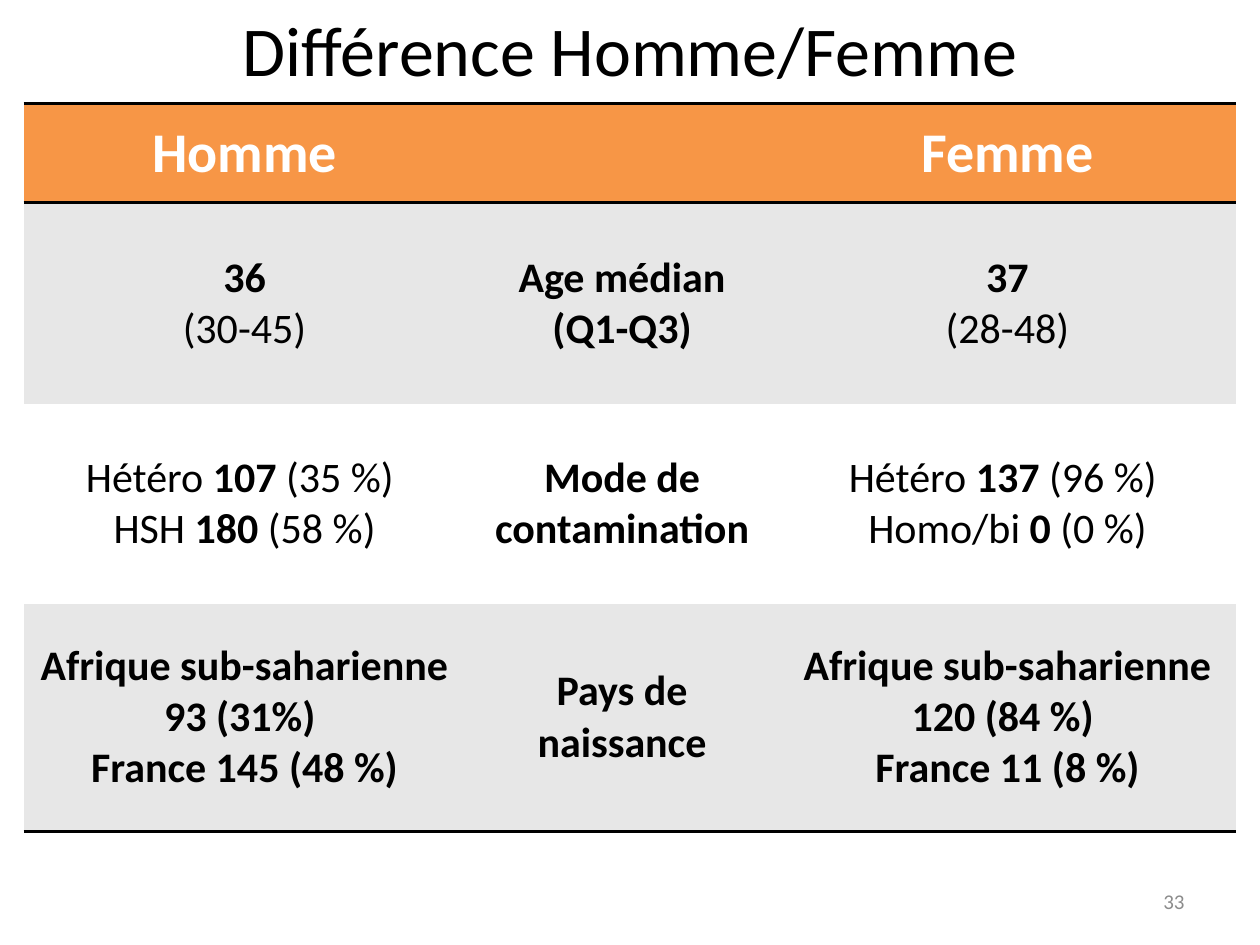
from lxml import etree
from pptx import Presentation
from pptx.dml.color import RGBColor
from pptx.enum.text import MSO_ANCHOR, PP_ALIGN
from pptx.oxml.ns import qn
from pptx.util import Pt

CENTER, RIGHT = PP_ALIGN.CENTER, PP_ALIGN.RIGHT
TOP, MIDDLE = MSO_ANCHOR.TOP, MSO_ANCHOR.MIDDLE
BLACK = RGBColor(0x00, 0x00, 0x00)
WHITE = RGBColor(0xFF, 0xFF, 0xFF)
ORANGE = RGBColor(0xF7, 0x96, 0x46)
BAND = RGBColor(0xE7, 0xE7, 0xE7)
GRAY = RGBColor(0x8C, 0x8C, 0x8C)
FONT = "Calibri"
PLAIN_STYLE = "{2D5ABB26-0587-4C30-8999-92F81FD0307C}"
COLUMN_WIDTHS = (252.5, 179, 261.5)
ROW_HEIGHTS = (57, 115, 114, 130)
ROW_FILLS = (ORANGE, BAND, WHITE, BAND)
ROW_BORDERS = (("a:lnT", "a:lnB"), (), (), ("a:lnB",))
ROWS = (
    ("*Homme*", "", "*Femme*"),
    ("*36*\n(30-45)", "*Age médian*\n*(Q1-Q3)*", "*37*\n(28-48)"),
    ("Hétéro *107* (35 %) \nHSH *180* (58 %)", "*Mode de contamination*",
     "Hétéro *137* (96 %) \nHomo/bi *0* (0 %)"),
    ("*Afrique sub-saharienne*\n*93 (31%) *\n*France 145 (48 %)*", "*Pays de naissance*",
     "*Afrique sub-saharienne*\n*120 (84 %) *\n*France 11 (8 %)*"),
)


def write_text(frame, text, size, color, alignment=CENTER):
    """Write one paragraph per line, with the parts between asterisks in bold."""
    for index, line in enumerate(text.split("\n")):
        paragraph = frame.add_paragraph() if index else frame.paragraphs[0]
        paragraph.alignment = alignment
        for position, part in enumerate(line.split("*")):
            if not part:
                continue
            run = paragraph.add_run()
            run.text = part
            font_format = {"name": FONT, "size": Pt(size), "bold": position % 2 == 1}
            for name, value in font_format.items():
                setattr(run.font, name, value)
            run.font.color.rgb = color


def add_text_box(slide, box, text, size, color, alignment, anchor):
    """Add a wrapped text box at left, top, width, height."""
    frame = slide.shapes.add_textbox(*map(Pt, box)).text_frame
    for name, value in {"word_wrap": True, "vertical_anchor": anchor}.items():
        setattr(frame, name, value)
    write_text(frame, text, size, color, alignment)


def add_borders(cell, sides):
    """Draw black two-point borders on the given sides of a cell."""
    properties = cell._tc.get_or_add_tcPr()
    for index, side in enumerate(sides):
        line = etree.Element(qn(side), w=str(Pt(2)))
        fill = etree.SubElement(line, qn("a:solidFill"))
        etree.SubElement(fill, qn("a:srgbClr"), val=str(BLACK))
        properties.insert(index, line)


def add_comparison_table(slide):
    """Add the table that compares men and women."""
    frame = slide.shapes.add_table(len(ROWS), len(COLUMN_WIDTHS), Pt(13.5), Pt(59),
                                   Pt(sum(COLUMN_WIDTHS)), Pt(sum(ROW_HEIGHTS)))
    table = frame.table
    table.horz_banding = False
    table._tbl.tblPr.find(qn("a:tableStyleId")).text = PLAIN_STYLE
    for column, width in zip(table.columns, COLUMN_WIDTHS):
        column.width = Pt(width)
    for row_index, (row, height) in enumerate(zip(table.rows, ROW_HEIGHTS)):
        row.height = Pt(height)
        size, color = (24, BLACK) if row_index else (32, WHITE)
        for cell, text in zip(row.cells, ROWS[row_index]):
            cell.vertical_anchor = MIDDLE
            cell.fill.solid()
            cell.fill.fore_color.rgb = ROW_FILLS[row_index]
            add_borders(cell, ROW_BORDERS[row_index])
            write_text(cell.text_frame, text, size, color)


def main():
    """Build and save the slide."""
    presentation = Presentation()
    presentation.slide_width, presentation.slide_height = Pt(720), Pt(540)
    slide = presentation.slides.add_slide(presentation.slide_layouts[6])
    add_text_box(slide, (516, 500.5, 168, 28.75), "33", 12, GRAY, RIGHT, MIDDLE)
    add_text_box(slide, (0, 0, 720, 55.5), "Différence Homme/Femme", 40, BLACK, CENTER, TOP)
    add_comparison_table(slide)
    presentation.save("out.pptx")


if __name__ == "__main__":
    main()
